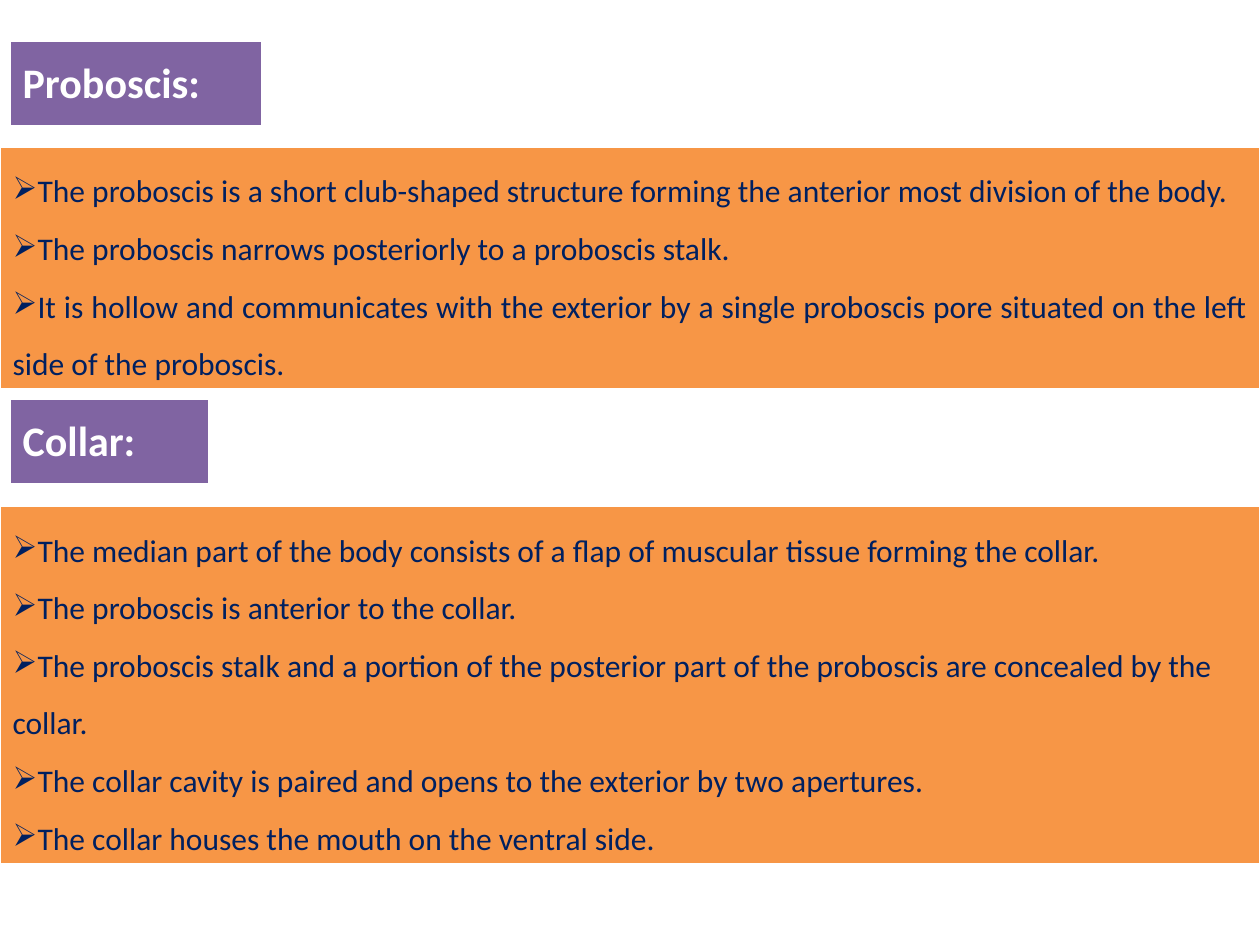
"""Build a slide describing the proboscis and the collar."""
from lxml.etree import SubElement
from pptx import Presentation
from pptx.dml.color import RGBColor
from pptx.enum.text import MSO_ANCHOR, PP_ALIGN
from pptx.oxml.ns import qn
from pptx.util import Inches, Pt

WHITE = RGBColor(0xFF, 0xFF, 0xFF)
NAVY = RGBColor(0x00, 0x20, 0x60)
PURPLE = RGBColor(0x80, 0x64, 0xA2)
ORANGE = RGBColor(0xF7, 0x96, 0x46)
BORDER_WIDTHS = {"a:lnL": 1, "a:lnR": 1, "a:lnT": 1, "a:lnB": 3}


def add_paragraph(text_frame, text, size, color, bold=False, align=PP_ALIGN.LEFT,
                  line_spacing=1.0, bullet=None):
    paragraph = text_frame.paragraphs[0]
    if paragraph.runs:
        paragraph = text_frame.add_paragraph()
    paragraph.alignment = align
    paragraph.line_spacing = line_spacing
    if bullet:
        SubElement(paragraph._p.get_or_add_pPr(), qn("a:buChar"), char=bullet)
    run = paragraph.add_run()
    run.text = text
    run.font.name = "Calibri"
    run.font.size = Pt(size)
    run.font.bold = bold
    run.font.color.rgb = color


def add_panel(slide, left, top, width, height, fill, anchor):
    frame = slide.shapes.add_table(1, 1, Inches(left), Inches(top),
                                   Inches(width), Inches(height))
    cell = frame.table.cell(0, 0)
    properties = cell._tc.get_or_add_tcPr()
    for side, points in BORDER_WIDTHS.items():
        line = SubElement(properties, qn(side), w=str(Pt(points)))
        solid = SubElement(line, qn("a:solidFill"))
        SubElement(solid, qn("a:srgbClr"), val=str(WHITE))
    cell.fill.solid()
    cell.fill.fore_color.rgb = fill
    cell.vertical_anchor = anchor
    return cell.text_frame


presentation = Presentation()
presentation.slide_width = Inches(10)
presentation.slide_height = Inches(7.5)
slide = presentation.slides.add_slide(presentation.slide_layouts[6])

sections = [
    ("Proboscis:", 0.33, 2, 1.17, 1.9, PP_ALIGN.JUSTIFY, [
        "The proboscis is a short club-shaped structure forming the anterior most "
        "division of the body.",
        "The proboscis narrows posteriorly to a proboscis stalk.",
        "It is hollow and communicates with the exterior by a single proboscis pore "
        "situated on the left side of the proboscis.",
    ]),
    ("Collar:", 3.17, 1.58, 4.02, 2.8, PP_ALIGN.LEFT, [
        "The median part of the body consists of a flap of muscular tissue forming "
        "the collar.",
        "The proboscis is anterior to the collar.",
        "The proboscis stalk and a portion of the posterior part of the proboscis "
        "are concealed by the collar.",
        "The collar cavity is paired and opens to the exterior by two apertures.",
        "The collar houses the mouth on the ventral side.",
    ]),
]

for title, title_top, title_width, body_top, body_height, align, points in sections:
    heading = add_panel(slide, 0.08, title_top, title_width, 0.68, PURPLE, MSO_ANCHOR.MIDDLE)
    add_paragraph(heading, title, size=24, color=WHITE, bold=True)
    body = add_panel(slide, 0, body_top, 10, body_height, ORANGE, MSO_ANCHOR.TOP)
    for point in points:
        add_paragraph(body, point, size=18, color=NAVY, align=align,
                      line_spacing=1.5, bullet="➢")

presentation.save("out.pptx")
